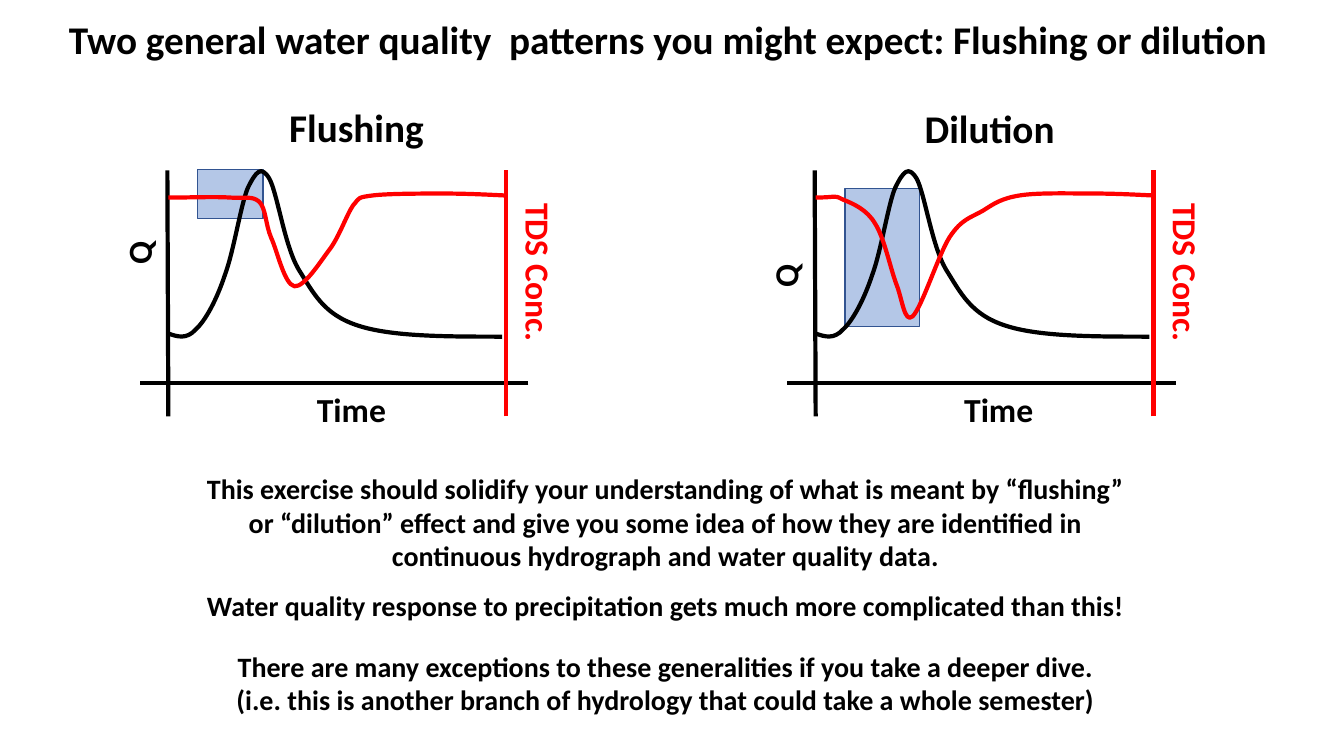
"""Build a slide comparing flushing and dilution patterns in water quality."""
from dataclasses import dataclass

from lxml import etree
from pptx import Presentation
from pptx import util as u
from pptx.dml.color import RGBColor
from pptx.enum import shapes, text
from pptx.oxml.ns import qn
from pptx.shapes.group import GroupShape
from pptx.slide import Slide
from pptx.text.text import TextFrame

Point = tuple[float, float]

BLACK = RGBColor(0x00, 0x00, 0x00)
RED = RGBColor(0xFF, 0x00, 0x00)
BOX_FILL = RGBColor(0xB4, 0xC7, 0xE7)
BOX_LINE = RGBColor(0x32, 0x54, 0x91)
FONT = "Calibri"

DISCHARGE: list[Point] = [
    (0, 3.31), (0.09, 3.34), (0.18, 3.37), (0.27, 3.27),
    (0.37, 3.18), (0.48, 2.97), (0.56, 2.73),
    (0.65, 2.49), (0.72, 2.02), (0.79, 1.86),
    (0.87, 1.7), (0.92, 1.64), (1.0, 1.77),
    (1.08, 1.91), (1.15, 2.43), (1.29, 2.67),
    (1.44, 2.91), (1.54, 3.12), (1.88, 3.23),
    (2.21, 3.34), (2.76, 3.34), (3.31, 3.34),
]
FLUSHING_TDS: list[Point] = [
    (0, 1.96), (0.23, 1.96), (0.46, 1.95), (0.61, 1.96),
    (0.75, 1.97), (0.83, 1.94), (0.9, 2.0),
    (0.97, 2.07), (0.96, 2.22), (1.02, 2.36),
    (1.08, 2.49), (1.15, 2.82), (1.25, 2.84),
    (1.35, 2.85), (1.51, 2.59), (1.61, 2.46),
    (1.7, 2.33), (1.77, 2.13), (1.83, 2.04),
    (1.9, 1.96), (1.87, 1.96), (2.02, 1.94),
    (2.17, 1.92), (2.51, 1.92), (2.73, 1.92),
    (2.95, 1.92), (3.15, 1.93), (3.35, 1.94),
]
DILUTION_TDS: list[Point] = [
    (0, 1.96), (0.23, 1.96), (0.17, 1.93), (0.27, 1.98),
    (0.37, 2.02), (0.51, 2.08), (0.59, 2.22),
    (0.68, 2.36), (0.74, 2.66), (0.8, 2.82),
    (0.86, 2.97), (0.88, 3.21), (0.96, 3.14),
    (1.05, 3.06), (1.22, 2.52), (1.33, 2.35),
    (1.45, 2.17), (1.54, 2.16), (1.66, 2.09),
    (1.77, 2.02), (1.84, 1.97), (2.02, 1.94),
    (2.2, 1.91), (2.51, 1.92), (2.73, 1.92),
    (2.95, 1.92), (3.15, 1.93), (3.35, 1.94),
]


@dataclass(frozen=True)
class Box:
    left: float
    top: float
    width: float
    height: float

    def lengths(self, offset: float = 0) -> list[u.Length]:
        return [u.Inches(value) for value in
                (self.left + offset, self.top, self.width, self.height)]


@dataclass(frozen=True)
class Label:
    wording: str
    box: Box
    size: int
    color: RGBColor = BLACK
    rotation: int = 0
    wrap: bool = True


@dataclass(frozen=True)
class Line:
    start: Point
    end: Point
    color: RGBColor


@dataclass(frozen=True)
class Curve:
    controls: list[Point]
    bounds: Box
    color: RGBColor


@dataclass(frozen=True)
class Pattern:
    origin: float
    highlight: Box
    discharge_label: Box
    concentration: Curve


TITLE = Label("Two general water quality  patterns you might expect: Flushing or dilution ",
              Box(0, 0.1, 13.33, 0.57), 28)
AXES = [
    Line((-0.01, 1.69), (0, 4.13), BLACK),
    Line((3.57, 3.8), (-0.28, 3.8), BLACK),
    Line((3.35, 4.13), (3.35, 1.69), RED),
]
AXIS_LABELS = [
    Label("Time", Box(1.37, 3.81, 0.89, 0.5), 24, wrap=False),
    Label("TDS Conc.", Box(2.88, 2.45, 1.59, 0.5), 24, RED, 90, False),
]
HYDROGRAPH = Curve(DISCHARGE, Box(0, 1.7, 3.31, 1.64), BLACK)
PATTERNS = [
    Pattern(1.67, Box(0.29, 1.68, 0.65, 0.49), Box(-0.51, 2.26, 0.43, 0.5),
            Curve(FLUSHING_TDS, Box(0, 1.92, 3.35, 0.92), RED)),
    Pattern(8.09, Box(0.29, 1.87, 0.74, 1.37), Box(-0.52, 2.49, 0.43, 0.5),
            Curve(DILUTION_TDS, Box(0, 1.92, 3.35, 1.23), RED)),
]
LABELS = [
    Label("Flushing", Box(1.12, 0.98, 4.83, 0.57), 28),
    Label("Dilution", Box(7.4, 0.99, 4.83, 0.57), 28),
    Label("Water quality response to precipitation gets much more complicated than this!",
          Box(1.93, 5.79, 9.34, 0.44), 20),
    Label("There are many exceptions to these generalities if you take a deeper dive.\n"
          "(i.e. this is another branch of hydrology that could take a whole semester)",
          Box(1.93, 6.39, 9.34, 0.77), 20),
    Label("This exercise should solidify your understanding of what is meant by “flushing” "
          "or “dilution” effect and give you some idea of how they are identified in "
          "continuous hydrograph and water quality data.", Box(1.93, 4.63, 9.34, 1.11), 20),
]


def write_label(frame: TextFrame, label: Label) -> None:
    frame.word_wrap = label.wrap
    frame.auto_size = text.MSO_AUTO_SIZE.NONE
    frame.vertical_anchor = text.MSO_ANCHOR.TOP
    paragraph = frame.paragraphs[0]
    paragraph.text = label.wording
    paragraph.alignment = text.PP_ALIGN.CENTER
    for run in paragraph.runs:
        run.font.name = FONT
        run.font.size = u.Pt(label.size)
        run.font.bold = True
        run.font.color.rgb = label.color


def add_label(parent: Slide | GroupShape, label: Label, offset: float = 0) -> None:
    shape = parent.shapes.add_textbox(*label.box.lengths(offset))
    shape.rotation = label.rotation
    write_label(shape.text_frame, label)


def add_axis(group: GroupShape, line: Line, origin: float) -> None:
    (start_x, start_y), (end_x, end_y) = line.start, line.end
    connector = group.shapes.add_connector(
        shapes.MSO_CONNECTOR.STRAIGHT, u.Inches(origin + start_x), u.Inches(start_y),
        u.Inches(origin + end_x), u.Inches(end_y))
    connector.line.color.rgb = line.color
    connector.line.width = u.Pt(3)
    etree.SubElement(connector._element.spPr, qn("a:effectLst"))


def add_curve(group: GroupShape, curve: Curve, origin: float) -> None:
    left, top, width, height = curve.bounds.lengths(origin)
    builder = group.shapes.build_freeform(left, top)
    builder.add_line_segments([(left + width, top + height)], close=False)
    shape = builder.convert_to_shape()
    outline = shape._element.find(".//" + qn("a:path"))
    for command in list(outline):
        outline.remove(command)
    for index, (x, y) in enumerate(curve.controls):
        if index % 3 == 1 or index == 0:
            command = etree.SubElement(outline, qn("a:cubicBezTo" if index else "a:moveTo"))
        etree.SubElement(command, qn("a:pt"), x=str(u.Inches(x)),
                         y=str(u.Inches(y) - top))
    shape.shadow.inherit = False
    shape.fill.background()
    shape.line.color.rgb = curve.color
    shape.line.width = u.Pt(3)


def add_pattern(slide: Slide, pattern: Pattern) -> None:
    group = slide.shapes.add_group_shape()
    highlight = group.shapes.add_shape(shapes.MSO_SHAPE.RECTANGLE,
                                       *pattern.highlight.lengths(pattern.origin))
    highlight.shadow.inherit = False
    highlight.fill.solid()
    highlight.fill.fore_color.rgb = BOX_FILL
    highlight.line.color.rgb = BOX_LINE
    highlight.line.width = u.Pt(1)
    for axis in AXES:
        add_axis(group, axis, pattern.origin)
    discharge_label = Label("Q", pattern.discharge_label, 24, rotation=270, wrap=False)
    for label in [*AXIS_LABELS, discharge_label]:
        add_label(group, label, pattern.origin)
    for curve in (HYDROGRAPH, pattern.concentration):
        add_curve(group, curve, pattern.origin)


def main() -> None:
    presentation = Presentation()
    presentation.slide_width, presentation.slide_height = u.Inches(13.33), u.Inches(7.5)
    slide = presentation.slides.add_slide(presentation.slide_layouts[5])
    title = slide.shapes.title
    title.left, title.top, title.width, title.height = TITLE.box.lengths()
    write_label(title.text_frame, TITLE)
    for pattern in PATTERNS:
        add_pattern(slide, pattern)
    for label in LABELS:
        add_label(slide, label)
    presentation.save("out.pptx")


if __name__ == "__main__":
    main()
